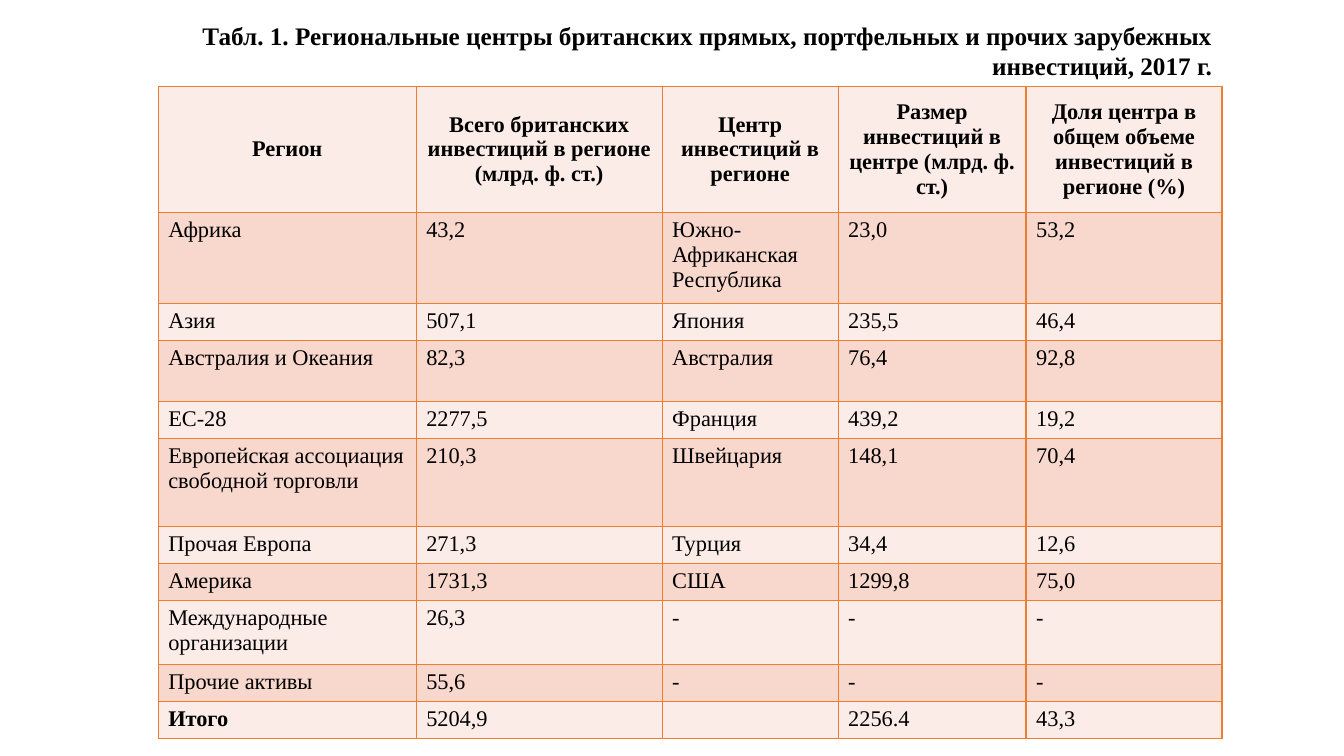
from typing import NamedTuple

from lxml import etree
from pptx import Presentation
from pptx.dml.color import RGBColor
from pptx.enum import text
from pptx.oxml import ns
from pptx.util import Pt

FONT = "Times New Roman"
BLACK, BORDER = "000000", "ED7D31"
BANDS = ("FCECE8", "F8D7CD")
LEFT, TITLE_TOP, TABLE_TOP, WIDTH = 113, 10.8, 61.7, 760
COLUMN_WIDTHS = (184.3, 175.7, 125.7, 134.3, 140)


class Row(NamedTuple):
    height: float
    region: str
    total: str
    center: str
    center_size: str
    share: str


ROWS = (
    Row(90, "Регион", "Всего британских инвестиций в регионе (млрд. ф. ст.)",
        "Центр инвестиций в регионе", "Размер инвестиций в центре (млрд. ф. ст.)",
        "Доля центра в общем объеме инвестиций в регионе (%)"),
    Row(65, "Африка", "43,2", "Южно-Африканская Республика", "23,0", "53,2"),
    Row(26.4, "Азия", "507,1", "Япония", "235,5", "46,4"),
    Row(43.6, "Австралия и Океания", "82,3", "Австралия", "76,4", "92,8"),
    Row(26.4, "ЕС-28", "2277,5", "Франция", "439,2", "19,2"),
    Row(62.9, "Европейская ассоциация свободной торговли", "210,3", "Швейцария",
        "148,1", "70,4"),
    Row(26.4, "Прочая Европа", "271,3", "Турция", "34,4", "12,6"),
    Row(26.4, "Америка", "1731,3", "США", "1299,8", "75,0"),
    Row(45.7, "Международные организации", "26,3", "-", "-", "-"),
    Row(26.4, "Прочие активы", "55,6", "-", "-", "-"),
    Row(26.4, "Итого", "5204,9", "", "2256.4", "43,3"),
)


def rgb(color: str) -> RGBColor:
    return RGBColor.from_string(color)


def format_paragraph(p, size: float, bold: bool, align: text.PP_ALIGN) -> None:
    p.alignment = align
    p.font.name = FONT
    p.font.size = Pt(size)
    p.font.bold = bold
    p.font.color.rgb = rgb(BLACK)


def set_borders(cell) -> None:
    """Draw a thin line on all four sides; call before the cell is filled."""
    props = cell._tc.get_or_add_tcPr()
    for side in ("lnL", "lnR", "lnT", "lnB"):
        line = etree.SubElement(props, ns.qn(f"a:{side}"), w=str(Pt(1)))
        fill = etree.SubElement(line, ns.qn("a:solidFill"))
        etree.SubElement(fill, ns.qn("a:srgbClr"), val=BORDER)


def add_title(s) -> None:
    sp = s.shapes.title
    sp.left, sp.top, sp.width, sp.height = Pt(LEFT), Pt(TITLE_TOP), Pt(WIDTH), Pt(51)
    tf = sp.text_frame
    tf.text = ("Табл. 1. Региональные центры британских прямых, портфельных "
               "и прочих зарубежных инвестиций, 2017 г.")
    tf.word_wrap = True
    tf.auto_size = text.MSO_AUTO_SIZE.NONE
    tf.vertical_anchor = text.MSO_ANCHOR.TOP
    format_paragraph(tf.paragraphs[0], 18, True, text.PP_ALIGN.RIGHT)


def add_investment_table(s) -> None:
    height = sum(row.height for row in ROWS)
    table = s.shapes.add_table(len(ROWS), len(COLUMN_WIDTHS), Pt(LEFT), Pt(TABLE_TOP),
                               Pt(WIDTH), Pt(height)).table
    for column, width in zip(table.columns, COLUMN_WIDTHS):
        column.width = Pt(width)
    for i, (row_height, *values) in enumerate(ROWS):
        table.rows[i].height = Pt(row_height)
        header = i == 0
        for j, value in enumerate(values):
            cell = table.cell(i, j)
            set_borders(cell)
            cell.fill.solid()
            cell.fill.fore_color.rgb = rgb(BANDS[i % 2])
            cell.vertical_anchor = text.MSO_ANCHOR.MIDDLE if header else text.MSO_ANCHOR.TOP
            cell.text = value
            bold = header or value == "Итого"
            align = text.PP_ALIGN.CENTER if header else text.PP_ALIGN.LEFT
            format_paragraph(cell.text_frame.paragraphs[0], 16, bold, align)


def main() -> None:
    prs = Presentation()
    prs.slide_width, prs.slide_height = Pt(960), Pt(540)
    s = prs.slides.add_slide(prs.slide_layouts[5])
    add_title(s)
    add_investment_table(s)
    prs.save("out.pptx")


if __name__ == "__main__":
    main()
